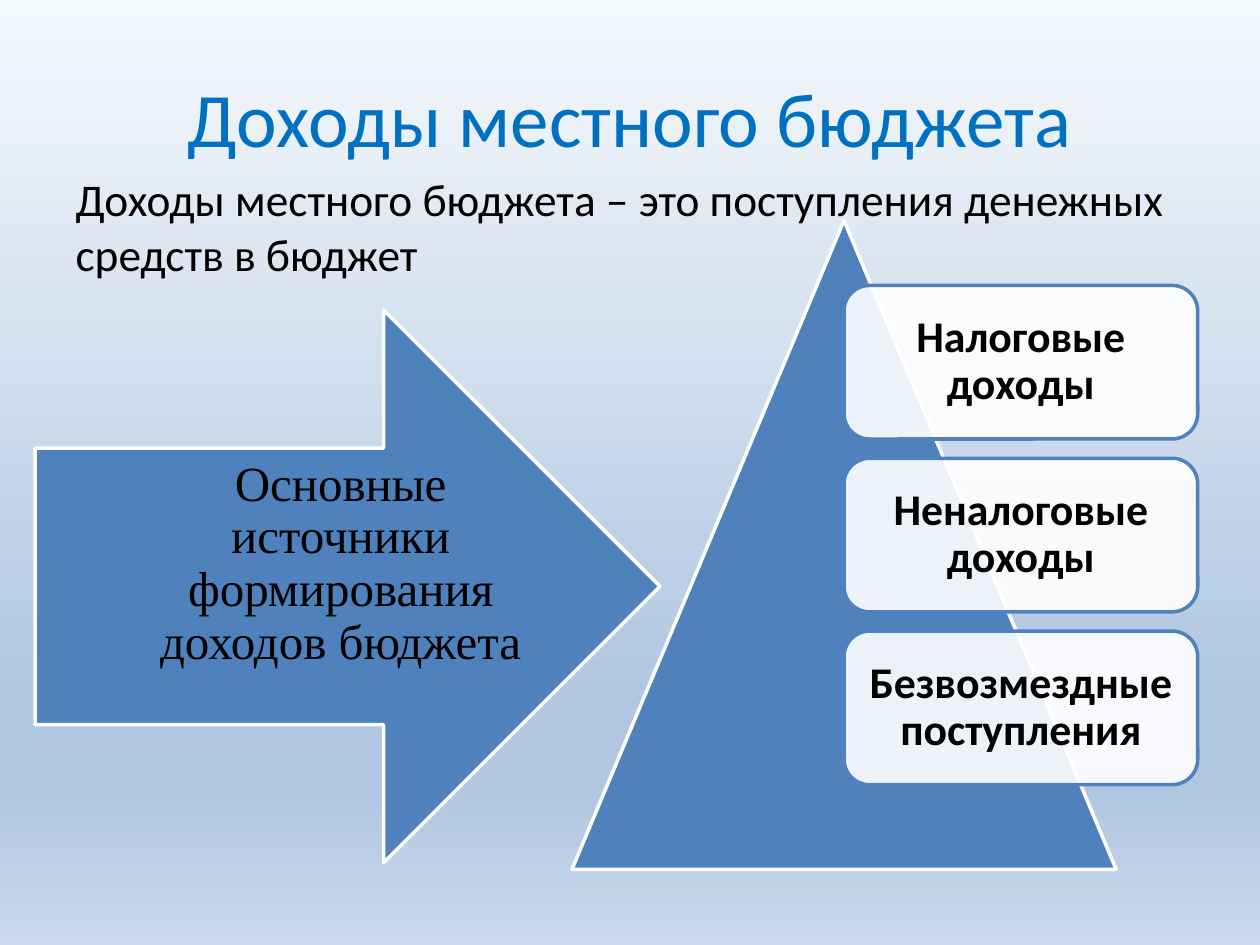
from lxml.etree import SubElement
from pptx import Presentation
from pptx.dml.color import RGBColor
from pptx.enum.shapes import MSO_SHAPE
from pptx.enum.text import MSO_ANCHOR, PP_ALIGN
from pptx.oxml.ns import qn
from pptx.util import Pt

BLUE, WHITE, BLACK = "4F81BD", "FFFFFF", "000000"


def color(code):
    return RGBColor.from_string(code)


def place(shape, box):
    shape.left, shape.top, shape.width, shape.height = map(Pt, box)


def write(shape, text, size, ink=BLACK, font="Calibri", bold=False, align=PP_ALIGN.CENTER):
    para = shape.text_frame.paragraphs[0]
    para.alignment = align
    run = para.add_run()
    run.text = text
    run.font.size = Pt(size)
    run.font.name = font
    run.font.bold = bold
    run.font.color.rgb = color(ink)
    return para


def inset(shape, left, top, right, bottom):
    frame = shape.text_frame
    frame.word_wrap = True
    frame.vertical_anchor = MSO_ANCHOR.MIDDLE
    frame.margin_left, frame.margin_top = Pt(left), Pt(top)
    frame.margin_right, frame.margin_bottom = Pt(right), Pt(bottom)


def draw(slide, kind, box, fill, line):
    shape = slide.shapes.add_shape(kind, *map(Pt, box))
    shape.shadow.inherit = False
    shape.fill.solid()
    shape.fill.fore_color.rgb = color(fill)
    shape.line.color.rgb = color(line)
    shape.line.width = Pt(2)
    return shape


def backdrop(slide):
    fill = slide.background.fill
    fill.gradient()
    fill.gradient_angle = 270
    stops = next(slide.element.iter(qn("a:gsLst")))
    for stop in list(stops):
        stops.remove(stop)
    for pos, code in ((0, "F6F9FC"), (74, "B0C6E1"), (83, "B0C6E1"), (100, "CAD9EB")):
        stop = SubElement(stops, qn("a:gs"), pos=str(pos * 1000))
        SubElement(stop, qn("a:srgbClr"), val=code)


def heading(slide, box):
    title = slide.shapes.title
    place(title, box)
    title.text_frame.vertical_anchor = MSO_ANCHOR.MIDDLE
    write(title, "Доходы местного бюджета", 44, "0070C0")


def intro(slide, box):
    body = slide.placeholders[1]
    place(body, box)
    para = write(
        body,
        "Доходы местного бюджета – это поступления денежных средств в бюджет",
        25.9,
        align=PP_ALIGN.LEFT,
    )
    para.space_before = Pt(5)
    props = para._p.get_or_add_pPr()
    props.set("marL", "0")
    props.set("indent", "0")
    SubElement(props, qn("a:buNone"))


def pyramid(slide, box):
    left, top, width, height = box
    draw(slide, MSO_SHAPE.ISOSCELES_TRIANGLE, box, BLUE, WHITE)
    tall = 87.8
    names = ("Налоговые доходы", "Неналоговые доходы", "Безвозмездные поступления")
    for row, name in enumerate(names):
        spot = (left + width / 2, top + height / 10 + row * tall * 9 / 8, width * 0.65, tall)
        card = draw(slide, MSO_SHAPE.ROUNDED_RECTANGLE, spot, WHITE, BLUE)
        tint = card.fill._xPr.find(qn("a:solidFill"))[0]
        SubElement(tint, qn("a:alpha"), val="90000")
        inset(card, 7.2, 7.2, 7.2, 7.2)
        write(card, name, 25, bold=True).line_spacing = 0.9


def arrow(slide, box):
    shape = draw(slide, MSO_SHAPE.RIGHT_ARROW, box, BLUE, WHITE)
    inset(shape, 66, 0, -5, 25)
    text = "Основные источники формирования доходов бюджета"
    write(shape, text, 28, font="Times New Roman").line_spacing = 0.9


def main():
    deck = Presentation()
    deck.slide_width, deck.slide_height = Pt(720), Pt(540)
    slide = deck.slides.add_slide(deck.slide_layouts[1])
    backdrop(slide)
    heading(slide, (36, 21.6, 648, 90))
    pyramid(slide, (326.8, 126, 311, 370.8))
    intro(slide, (36, 94.3, 648, 64.8))
    arrow(slide, (20.1, 177.1, 357.1, 316))
    deck.save("out.pptx")


if __name__ == "__main__":
    main()
